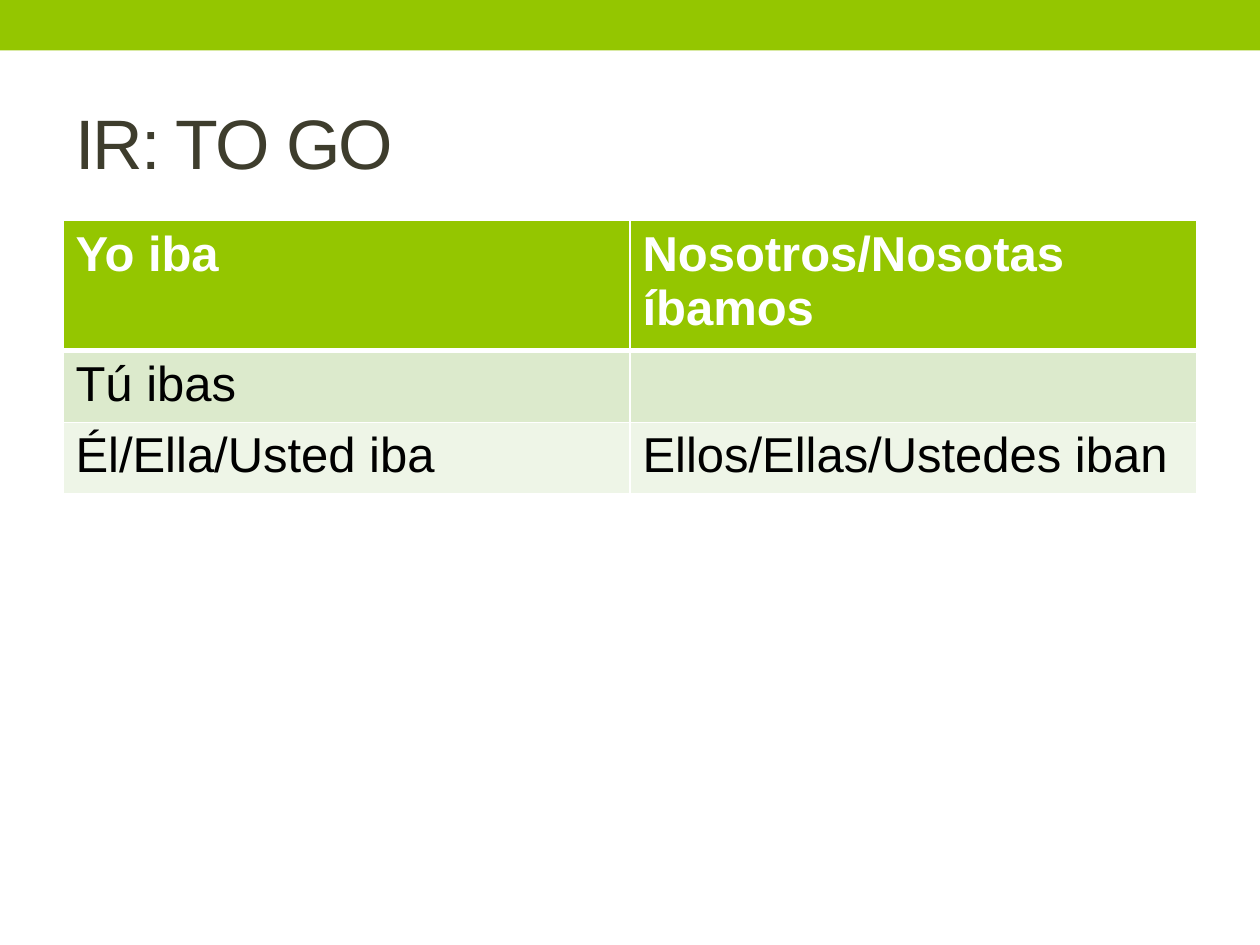
from dataclasses import dataclass

from lxml.etree import SubElement
from pptx import Presentation
from pptx.dml.color import RGBColor
from pptx.enum.shapes import MSO_SHAPE
from pptx.enum.text import MSO_ANCHOR
from pptx.oxml.ns import qn
from pptx.slide import Slide
from pptx.table import _Cell
from pptx.text.text import TextFrame
from pptx.util import Inches, Pt

GREEN = RGBColor(0x94, 0xC6, 0x00)
LIGHT_GREEN = RGBColor(0xDC, 0xEA, 0xCC)
PALE_GREEN = RGBColor(0xEE, 0xF5, 0xE7)
OLIVE = RGBColor(0x3E, 0x3D, 0x2D)
WHITE = RGBColor(0xFF, 0xFF, 0xFF)
BLACK = RGBColor(0x00, 0x00, 0x00)


@dataclass
class ConjugationRow:
    texts: tuple[str, str]
    fill: RGBColor
    color: RGBColor = BLACK
    bold: bool = False
    top_border: float = 1
    bottom_border: float = 1


ROWS = [
    ConjugationRow(("Yo iba", "Nosotros/Nosotas íbamos"), GREEN, WHITE, True, bottom_border=3),
    ConjugationRow(("Tú ibas", ""), LIGHT_GREEN, top_border=3),
    ConjugationRow(("Él/Ella/Usted iba", "Ellos/Ellas/Ustedes iban"), PALE_GREEN),
]


def write_text(frame: TextFrame, text: str, size: float, color: RGBColor, bold: bool = False):
    span = frame.paragraphs[0].add_run()
    span.text = text
    font_format = {"name": "Arial", "size": Pt(size), "bold": bold}
    for name, value in font_format.items():
        setattr(span.font, name, value)
    span.font.color.rgb = color
    return span


def add_border(cell: _Cell, tag: str, width: float) -> None:
    line = SubElement(cell._tc.get_or_add_tcPr(), qn(tag), w=str(Pt(width)))
    fill = SubElement(line, qn("a:solidFill"))
    SubElement(fill, qn("a:srgbClr"), val=str(WHITE))


def draw_top_band(slide: Slide) -> None:
    band = slide.shapes.add_shape(MSO_SHAPE.RECTANGLE, 0, 0, Inches(10), Inches(0.4))
    band.shadow.inherit = False
    band.fill.solid()
    band.fill.fore_color.rgb = GREEN
    band.line.fill.background()


def draw_title(slide: Slide, text: str) -> None:
    box = slide.shapes.add_textbox(Inches(0.5), Inches(0.58), Inches(9), Inches(1.08))
    frame = box.text_frame
    frame.word_wrap = True
    frame.vertical_anchor = MSO_ANCHOR.MIDDLE
    span = write_text(frame, text, 40, OLIVE)
    span.font._element.set("spc", "-100")


def draw_conjugation_table(slide: Slide, rows: list[ConjugationRow]) -> None:
    table = slide.shapes.add_table(
        len(rows), 2, Inches(0.5), Inches(1.75), Inches(9), Inches(0.41 * len(rows))
    ).table
    for table_row, row in zip(table.rows, rows):
        borders = {"a:lnL": 1, "a:lnR": 1, "a:lnT": row.top_border, "a:lnB": row.bottom_border}
        for cell, text in zip(table_row.cells, row.texts):
            for tag, width in borders.items():
                add_border(cell, tag, width)
            cell.fill.solid()
            cell.fill.fore_color.rgb = row.fill
            if text:
                write_text(cell.text_frame, text, 28, row.color, row.bold)


def main() -> None:
    deck = Presentation()
    deck.slide_width, deck.slide_height = Inches(10), Inches(7.5)
    slide = deck.slides.add_slide(deck.slide_layouts[6])
    draw_top_band(slide)
    draw_title(slide, "IR: TO GO")
    draw_conjugation_table(slide, ROWS)
    deck.save("out.pptx")


if __name__ == "__main__":
    main()
